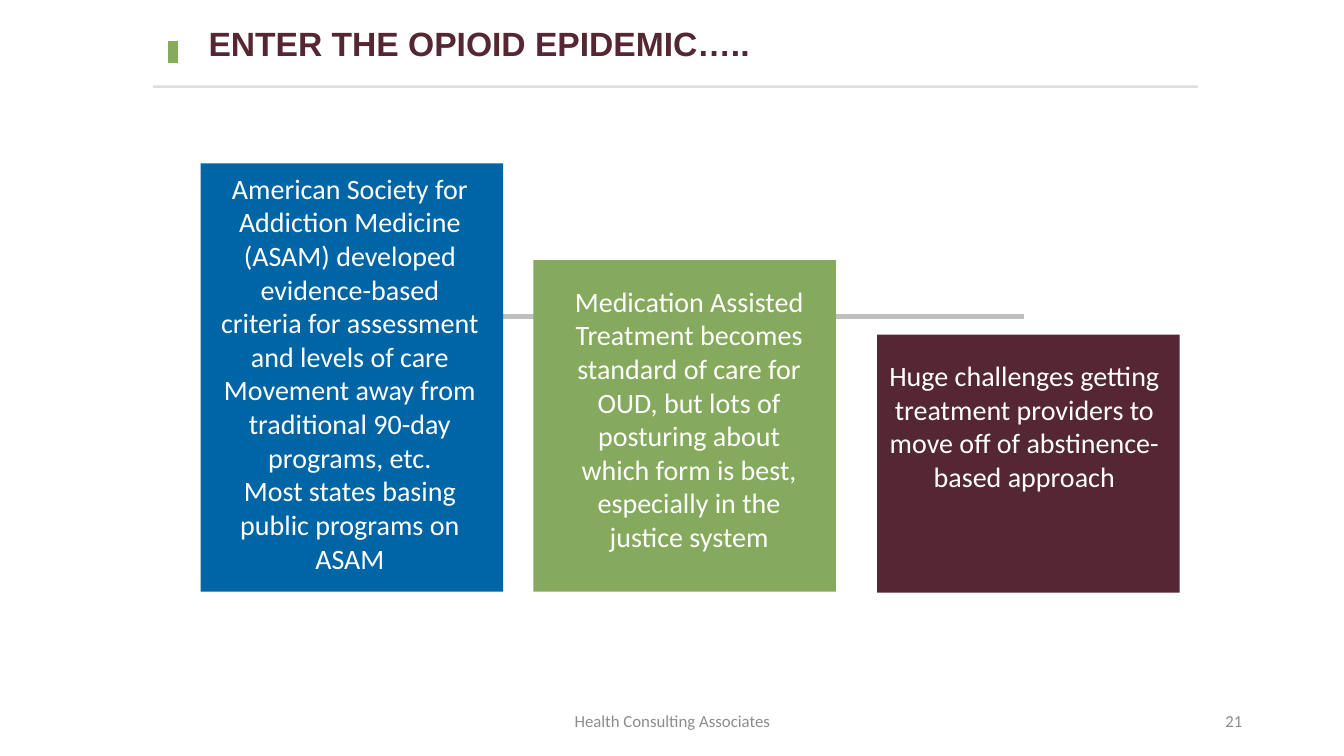
from pptx import Presentation
from pptx.dml.color import RGBColor
from pptx.enum.shapes import MSO_CONNECTOR as Conn, MSO_SHAPE as Shape
from pptx.enum.text import MSO_ANCHOR as Anchor, MSO_AUTO_SIZE as Auto, PP_ALIGN as Align
from pptx.oxml.ns import qn
from pptx.util import Inches, Pt
from lxml import etree

BODY = {"name": "Calibri", "size": Pt(20)}
FOOT = {"name": "Calibri", "size": Pt(12)}
HEAD = {"name": "Arial", "size": Pt(24), "bold": True}
WHITE, GREY = "FFFFFF", "8C8C8C"

# fill, box (left, top, width, height), text area, paragraphs
STEPS = [
    ("0065A5", (1.99, 1.62, 3, 4.25), (2.08, 1.65, 2.78, 4.14),
     ["American Society for Addiction Medicine (ASAM) developed "
      "evidence-based criteria for assessment and levels of care",
      "Movement away from traditional 90-day programs, etc.",
      "Most states basing public programs on ASAM"]),
    ("85AA5D", (5.29, 2.58, 3, 3.29), (5.51, 2.77, 2.65, 2.79),
     ["Medication Assisted Treatment becomes standard of care for OUD, "
      "but lots of posturing about which form is best, especially in the "
      "justice system"]),
    ("552633", (8.7, 3.32, 3, 2.56), (8.66, 3.51, 3, 1.45),
     ["Huge challenges getting treatment providers to move off of "
      "abstinence- based approach"]),
]


def paint(color, code):
    color.rgb = RGBColor.from_string(code)


def add_line(slide, start, end, code, width, alpha=None):
    line = slide.shapes.add_connector(
        Conn.STRAIGHT, *[Inches(v) for v in start + end])
    line.line.width = Pt(width)
    line.line.fill.solid()
    paint(line.line.fill.fore_color, code)
    props = line.element.spPr
    if alpha:
        tint = next(props.iter(qn("a:srgbClr")))
        etree.SubElement(tint, qn("a:alpha")).set("val", str(alpha * 1000))
    etree.SubElement(props, qn("a:effectLst"))


def add_block(slide, area, code):
    block = slide.shapes.add_shape(Shape.RECTANGLE, *[Inches(v) for v in area])
    block.shadow.inherit = False
    block.fill.solid()
    paint(block.fill.fore_color, code)
    block.line.fill.background()


def add_text(slide, area, lines, style, code, align=Align.CENTER, grow=True):
    frame = slide.shapes.add_textbox(*[Inches(v) for v in area]).text_frame
    frame.word_wrap = True
    frame.auto_size = Auto.SHAPE_TO_FIT_TEXT if grow else Auto.NONE
    frame.vertical_anchor = Anchor.TOP if grow else Anchor.MIDDLE
    for i, line in enumerate(lines):
        para = frame.add_paragraph() if i else frame.paragraphs[0]
        para.alignment = align
        run = para.add_run()
        run.text = line
        for key, value in style.items():
            setattr(run.font, key, value)
        paint(run.font.color, code)


def main():
    deck = Presentation()
    deck.slide_width, deck.slide_height = Inches(13.33), Inches(7.5)
    slide = deck.slides.add_slide(deck.slide_layouts[6])

    # Steps on their timeline
    add_line(slide, (4.01, 3.14), (10.16, 3.14), "BFBFBF", 3)
    for fill, box, area, lines in STEPS:
        add_block(slide, box, fill)
        add_text(slide, area, lines, BODY, WHITE)

    # Title with marker and rule
    add_line(slide, (1.72, 0.41), (1.72, 0.63), "86AB5D", 7)
    add_line(slide, (1.52, 0.86), (11.88, 0.86), "000000", 1.75, alpha=12)
    add_text(slide, (1.97, 0.18, 9.72, 0.5), ["ENTER THE OPIOID EPIDEMIC….."],
             HEAD, "552733", Align.LEFT)

    # Footer
    add_text(slide, (4.42, 6.95, 4.5, 0.4), ["Health Consulting Associates"],
             FOOT, GREY, grow=False)
    add_text(slide, (9.42, 6.95, 3, 0.4), ["21"], FOOT, GREY, Align.RIGHT,
             grow=False)

    deck.save("out.pptx")


if __name__ == "__main__":
    main()
